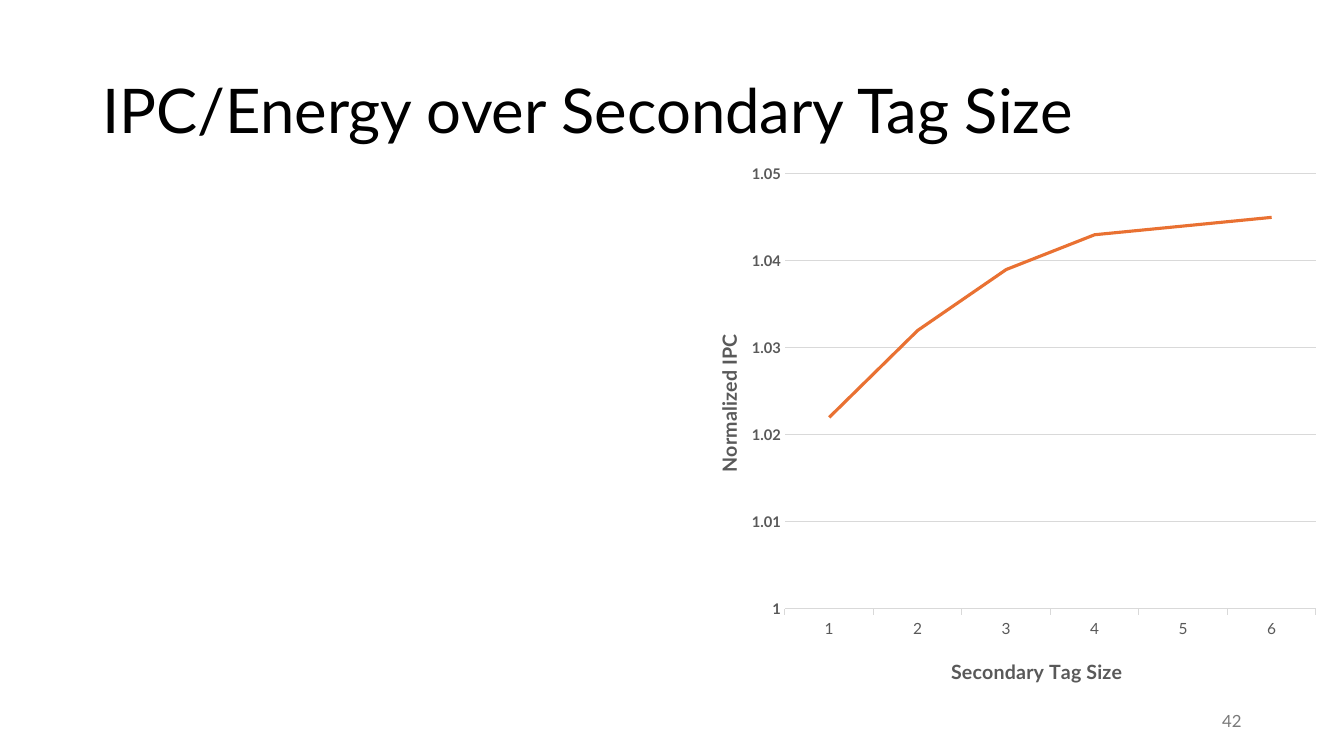
from dataclasses import dataclass
from typing import Any

from lxml import etree
from pptx import Presentation
from pptx import util as u
from pptx.chart import data
from pptx.dml.color import RGBColor
from pptx.enum import chart as charts, text
from pptx.oxml import ns

BLACK = RGBColor(0x00, 0x00, 0x00)
AXIS_GRAY = RGBColor(0x59, 0x59, 0x59)
GRID_GRAY = RGBColor(0xD9, 0xD9, 0xD9)
NUMBER_GRAY = RGBColor(0x79, 0x79, 0x79)
ORANGE = RGBColor(0xE9, 0x71, 0x32)
FONT = "Lato"
CHART_WIDTH, CHART_HEIGHT = 458.64, 390.96


@dataclass(frozen=True)
class Label:
    words: str
    left: float
    top: float
    width: float
    height: float
    size: float
    color: RGBColor
    align: Any
    spacing: float


@dataclass(frozen=True)
class AxisStyle:
    title: str
    title_left: float
    title_top: float
    rotation: int
    size: float
    bold: bool
    tick: Any


LABELS = [
    Label("IPC/Energy over Secondary Tag Size", 66, 28.75, 828, 104.4, 44, BLACK,
          text.PP_ALIGN.LEFT, 0.9),
    Label("42", 678, 500.4, 216, 28.8, 12, NUMBER_GRAY, text.PP_ALIGN.RIGHT, 1.0),
]
CATEGORY_STYLE = AxisStyle("Secondary Tag Size", 186.5, 357, 0, 11, False,
                           charts.XL_TICK_MARK.OUTSIDE)
VALUE_STYLE = AxisStyle("Normalized IPC", 17.5, 126, -5400000, 10.5, True,
                        charts.XL_TICK_MARK.NONE)


def apply(target: Any, values: dict[str, Any]) -> None:
    for name, value in values.items():
        setattr(target, name, value)


def style_font(font: Any, size: float, color: RGBColor, bold: bool = False) -> None:
    apply(font, {"name": FONT, "size": u.Pt(size), "bold": bold})
    font.color.rgb = color


def style_line(line: Any, color: RGBColor, width: float) -> None:
    line.color.rgb = color
    line.width = u.Pt(width)


def draw_label(page: Any, label: Label) -> None:
    box = page.shapes.add_textbox(u.Pt(label.left), u.Pt(label.top),
                                  u.Pt(label.width), u.Pt(label.height))
    apply(box.text_frame, {"word_wrap": True,
                           "vertical_anchor": text.MSO_ANCHOR.MIDDLE})
    para = box.text_frame.paragraphs[0]
    apply(para, {"alignment": label.align, "line_spacing": label.spacing})
    span = para.add_run()
    span.text = label.words
    style_font(span.font, label.size, label.color)


def place(parent: Any, index: int, left: float, top: float,
          width: float = 0, height: float = 0) -> None:
    for old in parent.findall(ns.qn("c:layout")):
        parent.remove(old)
    layout = etree.Element(ns.qn("c:layout"))
    manual = etree.SubElement(layout, ns.qn("c:manualLayout"))
    settings: dict[str, Any] = {"xMode": "edge", "yMode": "edge",
                                "x": left / CHART_WIDTH, "y": top / CHART_HEIGHT}
    if width:
        settings = {"layoutTarget": "inner", **settings,
                    "w": width / CHART_WIDTH, "h": height / CHART_HEIGHT}
    for name, value in settings.items():
        etree.SubElement(manual, ns.qn(f"c:{name}")).set("val", str(value))
    parent.insert(index, layout)


def style_axis(axis: Any, style: AxisStyle) -> None:
    apply(axis, {"major_tick_mark": style.tick,
                 "minor_tick_mark": charts.XL_TICK_MARK.NONE})
    style_font(axis.tick_labels.font, style.size, AXIS_GRAY, style.bold)
    title = axis.axis_title
    frame = title.text_frame
    span = frame.paragraphs[0].add_run()
    span.text = style.title
    style_font(span.font, 14, AXIS_GRAY, True)
    frame._txBody.bodyPr.set("rot", str(style.rotation))
    place(title._element, 1, style.title_left, style.title_top)


def draw_chart(page: Any) -> None:
    ipc = data.CategoryChartData(number_format="General")
    ipc.categories = ["1", "2", "3", "4", "5", "6"]
    ipc.add_series("Series 1", [1.022, 1.032, 1.039, 1.043, 1.044, 1.045])
    chart = page.shapes.add_chart(charts.XL_CHART_TYPE.LINE, u.Pt(490.32), u.Pt(110.16),
                                  u.Pt(CHART_WIDTH), u.Pt(CHART_HEIGHT), ipc).chart
    apply(chart, {"has_legend": False, "has_title": False})
    style_font(chart.font, 10, BLACK)
    plot = chart.plots[0]
    plot.vary_by_categories = False
    series = plot.series[0]
    series.smooth = False
    style_line(series.format.line, ORANGE, 2.25)

    style_axis(chart.category_axis, CATEGORY_STYLE)
    style_line(chart.category_axis.format.line, GRID_GRAY, 0.75)
    values = chart.value_axis
    style_axis(values, VALUE_STYLE)
    apply(values, {"minimum_scale": 1, "maximum_scale": 1.05, "major_unit": 0.01,
                   "has_major_gridlines": True})
    values.format.line.fill.background()
    style_line(values.major_gridlines.format.line, GRID_GRAY, 0.75)
    plot_area = chart._chartSpace.find(".//" + ns.qn("c:plotArea"))
    place(plot_area, 0, 70.4, 14.1, 379.3, 310.7)


def main() -> None:
    deck = Presentation()
    apply(deck, {"slide_width": u.Pt(960), "slide_height": u.Pt(540)})
    page = deck.slides.add_slide(deck.slide_layouts[6])
    for label in LABELS:
        draw_label(page, label)
    draw_chart(page)
    deck.save("out.pptx")


if __name__ == "__main__":
    main()
